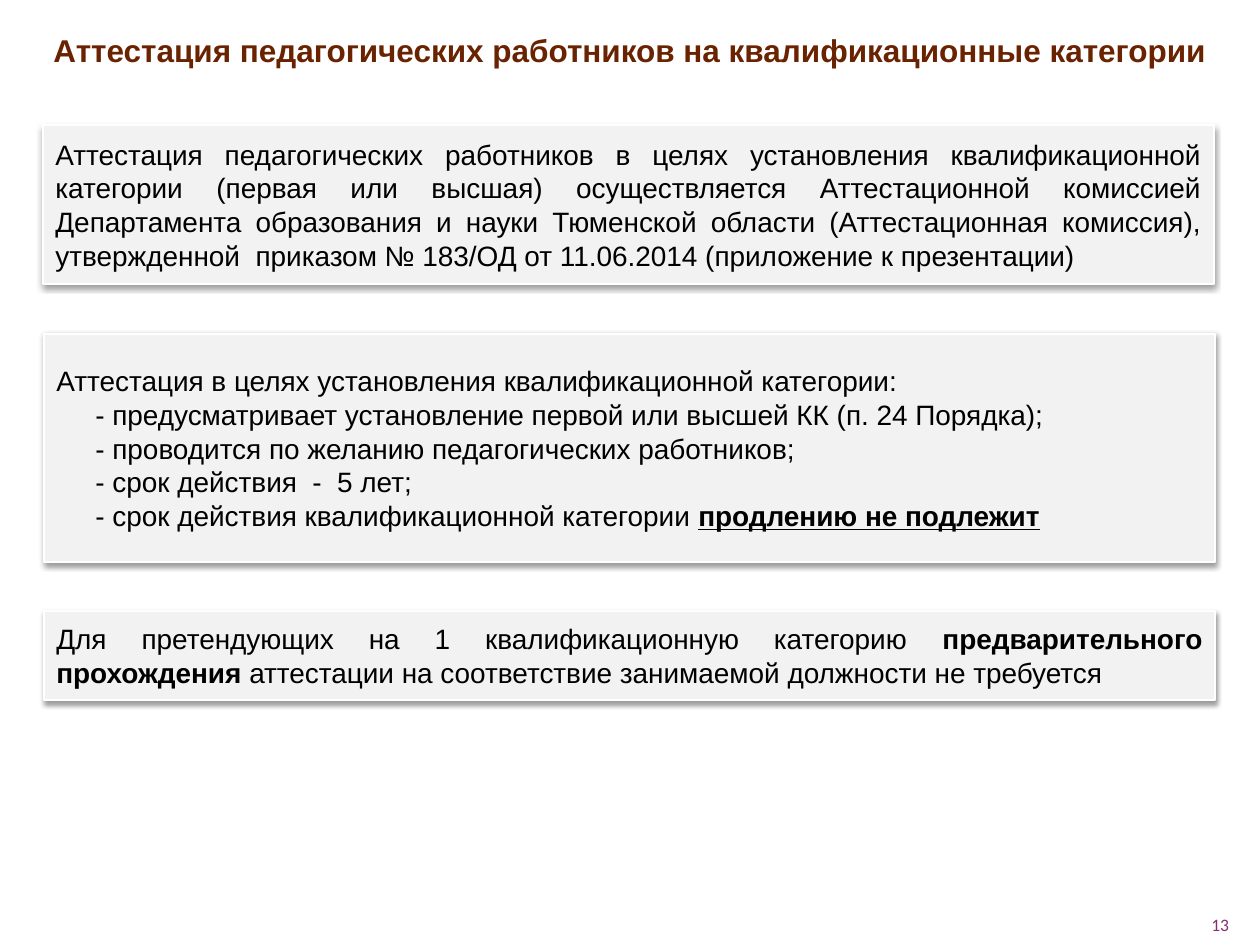
import pptx
import pptx.dml.color
import pptx.enum.shapes
import pptx.enum.text
import pptx.oxml
import pptx.oxml.ns
import pptx.util

ALIGN = pptx.enum.text.PP_ALIGN
ANCHOR = pptx.enum.text.MSO_ANCHOR
COLORS = {"panel": "F2F2F2", "edge": "FFFFFF", "text": "000000",
          "title": "6A2300", "number": "832F72"}
BODY = {"size": 16, "name": "Arial", "color": "text"}
TITLE = {"size": 18, "name": "Arial", "color": "title", "bold": True}
NUMBER = {"size": 10, "name": "Calibri", "color": "number"}
STRONG = {"bold": True}
STRONG_LINE = {"bold": True, "underline": True}
PANEL_WIDTH = 1171
LIST_INDENT = 39


def px(length):
    return pptx.util.Emu(round(length * 914400 / 126))


def rgb(name):
    return pptx.dml.color.RGBColor.from_string(COLORS[name])


class SlideBuilder:
    """Holds the shared style and the slide being filled."""

    def __init__(self, deck):
        self.page = deck.slides.add_slide(deck.slide_layouts[6])

    def fill_text(self, box, paragraphs, style, align, anchor):
        frame = box.text_frame
        frame.word_wrap = True
        frame.vertical_anchor = anchor
        for index, (indent, spans) in enumerate(paragraphs):
            para = frame.add_paragraph() if index else frame.paragraphs[0]
            para.alignment = align
            if indent:
                properties = para._p.get_or_add_pPr()
                properties.set("marL", str(px(indent)))
                properties.set("indent", "0")
            for text, extra in spans:
                span = para.add_run()
                span.text = text
                values = {**style, **extra}
                span.font.color.rgb = rgb(values.pop("color"))
                values["size"] = pptx.util.Pt(values["size"])
                for name, value in values.items():
                    setattr(span.font, name, value)

    def label(self, area, text, style, align, anchor=ANCHOR.TOP, margin=None):
        box = self.page.shapes.add_textbox(*map(px, area))
        if margin is not None:
            for side in ("left", "top", "right", "bottom"):
                setattr(box.text_frame, f"margin_{side}", px(margin))
        self.fill_text(box, [(0, [(text, {})])], style, align, anchor)

    def panel(self, left, top, height, paragraphs, align):
        kind = pptx.enum.shapes.MSO_SHAPE.RECTANGLE
        box = self.page.shapes.add_shape(kind, *map(px, (left, top, PANEL_WIDTH, height)))
        box.fill.solid()
        box.fill.fore_color.rgb = rgb("panel")
        box.line.color.rgb = rgb("edge")
        box.line.width = pptx.util.Pt(1.5)
        self.shade(box)
        self.fill_text(box, paragraphs, BODY, align, ANCHOR.MIDDLE)

    def shade(self, box):
        box.shadow.inherit = False
        effects = box._element.spPr.find(pptx.oxml.ns.qn("a:effectLst"))
        blur, distance = pptx.util.Pt(3.1), pptx.util.Pt(1.6)
        effects.append(pptx.oxml.parse_xml(
            f'<a:outerShdw {pptx.oxml.ns.nsdecls("a")} blurRad="{blur}" '
            f'dist="{distance}" dir="5400000" rotWithShape="0">'
            f'<a:srgbClr val="{COLORS["text"]}"><a:alpha val="38000"/></a:srgbClr>'
            '</a:outerShdw>'))


def main():
    deck = pptx.Presentation()
    deck.slide_width, deck.slide_height = px(1260), px(945)
    slide = SlideBuilder(deck)

    slide.label((1124, 885, 105, 50), "13", NUMBER, ALIGN.RIGHT, ANCHOR.BOTTOM, 0)

    features = [
        [("- предусматривает установление первой или высшей КК (п. 24 Порядка);", {})],
        [("- проводится по желанию педагогических работников;", {})],
        [("- срок действия  -  5 лет;", {})],
        [("- срок действия квалификационной категории ", {}),
         ("продлению не подлежит", STRONG_LINE)],
    ]
    heading = [("Аттестация в целях установления квалификационной категории:", {})]
    slide.panel(44, 334, 228,
                [(0, heading)] + [(LIST_INDENT, spans) for spans in features], ALIGN.LEFT)

    slide.panel(44, 611, 89, [(0, [
        ("Для претендующих на 1 квалификационную категорию ", {}),
        ("предварительного прохождения ", STRONG),
        ("аттестации на соответствие занимаемой должности не требуется", {}),
    ])], ALIGN.JUSTIFY)

    slide.label((0, 25, 1260, 50),
                "Аттестация педагогических работников на квалификационные категории",
                TITLE, ALIGN.CENTER)

    slide.panel(43, 125, 159, [(0, [(
        "Аттестация педагогических работников в целях установления квалификационной "
        "категории (первая или высшая) осуществляется Аттестационной комиссией "
        "Департамента образования и науки Тюменской области (Аттестационная комиссия), "
        "утвержденной  приказом № 183/ОД от 11.06.2014 (приложение к презентации)", {},
    )])], ALIGN.JUSTIFY)

    deck.save("out.pptx")


if __name__ == "__main__":
    main()
